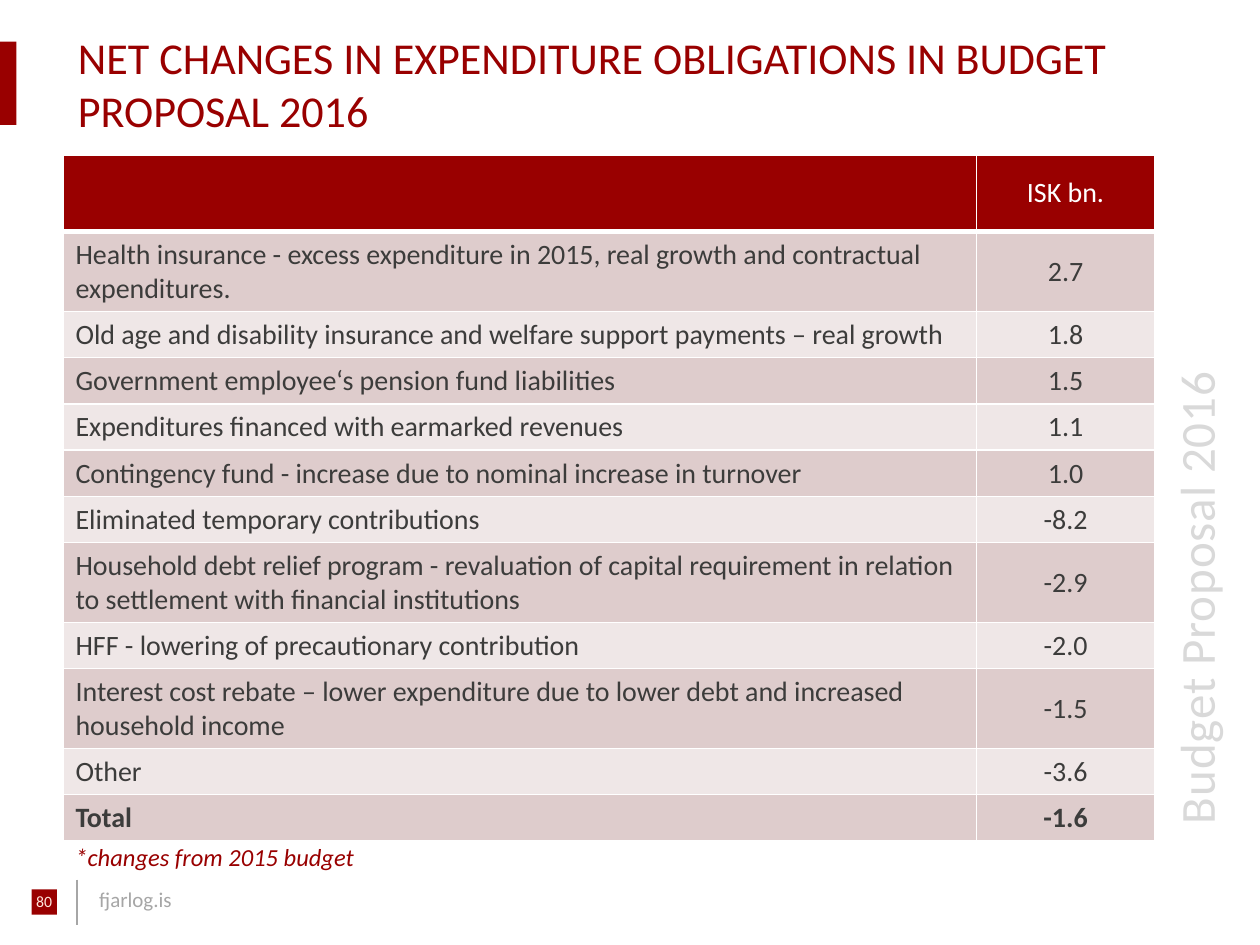
from lxml import etree
from pptx import Presentation
from pptx import util as u
from pptx.dml import color
from pptx.enum import shapes, text
from pptx.oxml import ns

RED, GREY, INK, WHITE = "990000", "A6A6A6", "3C3C3B", "FFFFFF"
BANDS = ("DECCCC", "EFE7E7")
LEFT, CENTRE = text.PP_ALIGN.LEFT, text.PP_ALIGN.CENTER
OBLIGATIONS = [
    ("Health insurance - excess expenditure in 2015, real growth and contractual expenditures.", "2.7"),
    ("Old age and disability insurance and welfare support payments – real growth", "1.8"),
    ("Government employee‘s pension fund liabilities", "1.5"),
    ("Expenditures financed with earmarked revenues", "1.1"),
    ("Contingency fund - increase due to nominal increase in turnover", "1.0"),
    ("Eliminated temporary contributions", "-8.2"),
    ("Household debt relief program - revaluation of capital requirement in relation "
     "to settlement with financial institutions", "-2.9"),
    ("HFF - lowering of precautionary contribution", "-2.0"),
    ("Interest cost rebate – lower expenditure due to lower debt and increased household income", "-1.5"),
    ("Other", "-3.6"),
    ("Total", "-1.6"),
]
ROW_HEIGHTS = [1.55, 0.89, 0.84] + [0.89] * 4 + [1.55, 0.89, 1.55, 0.89, 0.89]


def rgb(value):
    return color.RGBColor.from_string(value)


def box(*lengths):
    return [u.Cm(length) for length in lengths]


class BudgetSlide:
    """Holds the slide and its style, with a method for each kind of element."""

    def __init__(self, deck):
        self.font = "Calibri"
        self.slide = deck.slides.add_slide(deck.slide_layouts[5])
        self.shapes = self.slide.shapes

    def wording(self, frame, words, size, hue, align=LEFT, **formats):
        paragraph = frame.paragraphs[0]
        paragraph.alignment = align
        run = paragraph.add_run()
        run.text = words
        for key, value in {"name": self.font, "size": u.Pt(size), **formats}.items():
            setattr(run.font, key, value)
        run.font.color.rgb = rgb(hue)
        return run

    def title(self, words, *place):
        heading = self.shapes.title
        for key, value in zip(("left", "top", "width", "height"), box(*place)):
            setattr(heading, key, value)
        frame = heading.text_frame
        formats = {"margin_left": u.Cm(0.3), "margin_right": u.Cm(0.3),
                   "margin_top": u.Cm(0.15), "margin_bottom": u.Cm(0.15),
                   "word_wrap": True, "auto_size": text.MSO_AUTO_SIZE.NONE,
                   "vertical_anchor": text.MSO_ANCHOR.MIDDLE}
        for key, value in formats.items():
            setattr(frame, key, value)
        self.wording(frame, words, 25.2, RED)

    def block(self, *place):
        marker = self.shapes.add_shape(shapes.MSO_SHAPE.RECTANGLE, *box(*place))
        marker.shadow.inherit = False
        marker.fill.solid()
        marker.fill.fore_color.rgb = rgb(RED)
        marker.line.fill.background()

    def label(self, words, place, size, hue, align=LEFT, rotation=0, spacing=0, **formats):
        holder = self.shapes.add_textbox(*box(*place))
        holder.rotation = rotation
        holder.text_frame.word_wrap = True
        run = self.wording(holder.text_frame, words, size, hue, align, **formats)
        if spacing:
            run._r.get_or_add_rPr().set("spc", str(spacing))

    def rule(self, *ends):
        divider = self.shapes.add_connector(shapes.MSO_CONNECTOR.STRAIGHT, *box(*ends))
        divider.line.color.rgb = rgb(GREY)
        divider.line.width = u.Pt(1)
        etree.SubElement(divider._element.spPr, ns.qn("a:effectLst"))

    def cell(self, cell, words, fill, hue, align, bottom=1, bold=False):
        properties = cell._tc.get_or_add_tcPr()
        for side, width in {"L": 1, "R": 1, "T": 1, "B": bottom}.items():
            border = etree.SubElement(properties, ns.qn(f"a:ln{side}"), w=str(u.Pt(width)))
            paint = etree.SubElement(border, ns.qn("a:solidFill"))
            etree.SubElement(paint, ns.qn("a:srgbClr"), val=WHITE)
        cell.fill.solid()
        cell.fill.fore_color.rgb = rgb(fill)
        cell.vertical_anchor = text.MSO_ANCHOR.MIDDLE
        if words:
            self.wording(cell.text_frame, words, 16, hue, align, bold=bold)

    def table(self, header, rows, *place):
        grid = self.shapes.add_table(len(rows) + 1, len(header), *box(*place)).table
        for column, width in zip(grid.columns, box(18.42, 3.58)):
            column.width = width
        for row, height in zip(grid.rows, box(*ROW_HEIGHTS)):
            row.height = height
        for c, words in enumerate(header):
            self.cell(grid.cell(0, c), words, RED, WHITE, CENTRE, bottom=3)
        for r, entry in enumerate(rows, 1):
            for c, words in enumerate(entry):
                self.cell(grid.cell(r, c), words, BANDS[(r - 1) % 2], INK,
                          CENTRE if c else LEFT, bold=r == len(rows))


def main():
    deck = Presentation()
    deck.slide_width, deck.slide_height = box(25.4, 19.05)
    page = BudgetSlide(deck)
    page.block(0.64, 17.93, 0.51, 0.51)
    page.block(0, 0.84, 0.33, 1.68)
    page.label("Budget Proposal 2016", (17.22, 9.25, 13.77, 1.45), 28, "D9D9D9",
               rotation=270, spacing=50)
    page.label("fjarlog.is", (1.75, 17.75, 4.75, 0.76), 12, GREY)
    page.rule(1.55, 17.73, 1.55, 18.64)
    page.title("NET CHANGES IN EXPENDITURE OBLIGATIONS IN BUDGET PROPOSAL 2016",
               1.27, 0.84, 23.01, 1.68)
    page.label("80", (0, 17.86, 1.78, 1.19), 9, "FFE6DC", CENTRE)
    page.table(("", "ISK bn."), OBLIGATIONS, 1.27, 3.12, 22, 13.82)
    page.label("*changes from 2015 budget", (1.27, 16.84, 19.76, 0.86), 14, RED, italic=True)
    deck.save("out.pptx")


if __name__ == "__main__":
    main()
